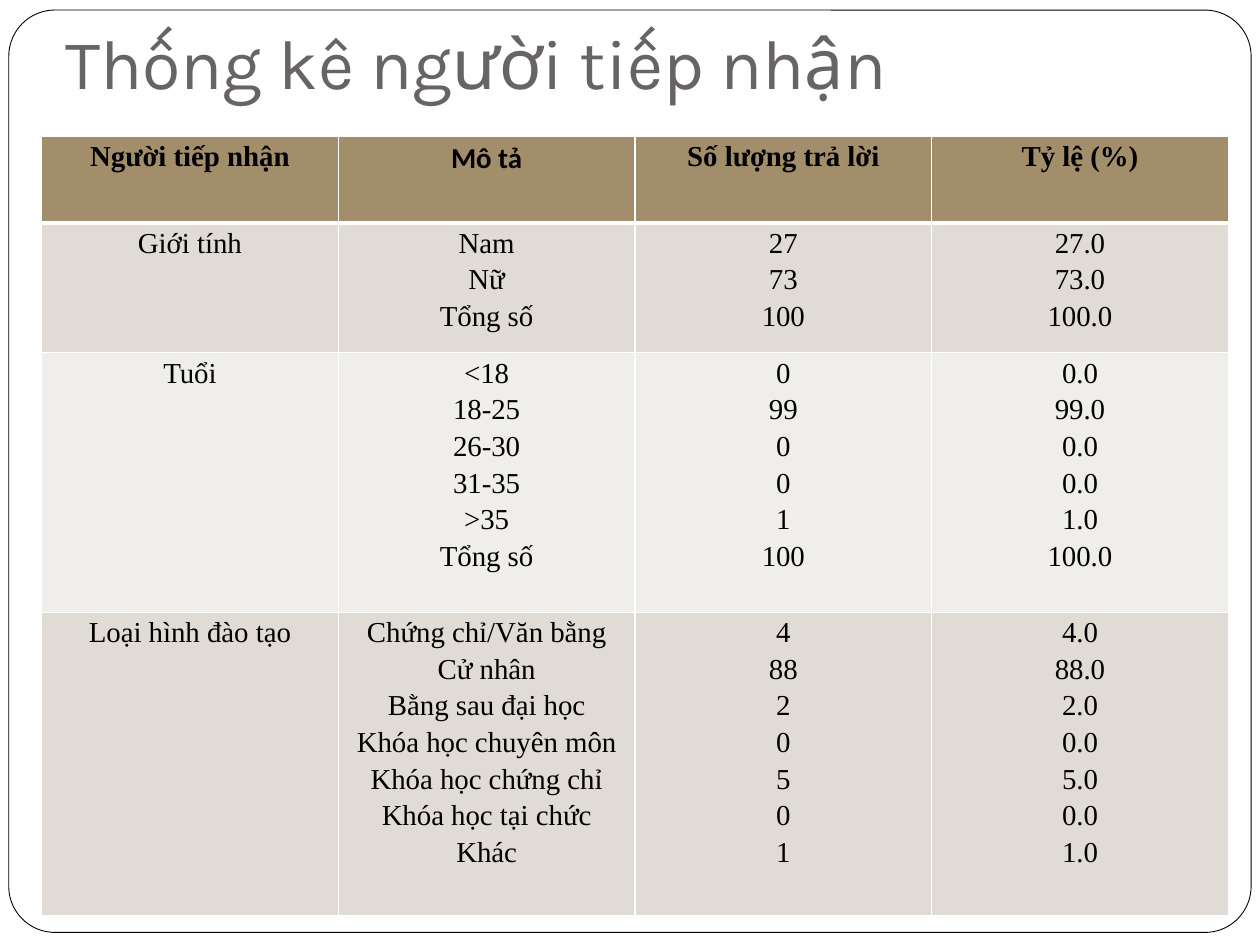
from lxml import etree
from pptx import Presentation
from pptx.dml.color import RGBColor
from pptx.enum.shapes import MSO_SHAPE
from pptx.enum.text import MSO_ANCHOR, PP_ALIGN
from pptx.oxml.ns import qn
from pptx.util import Inches, Pt

ROUNDED = MSO_SHAPE.ROUNDED_RECTANGLE
BOTTOM = MSO_ANCHOR.BOTTOM
CENTER = PP_ALIGN.CENTER
LEFT = PP_ALIGN.LEFT

HEADERS = ["Người tiếp nhận", "Mô tả", "Số lượng trả lời", "Tỷ lệ (%)"]
GROUPS = [
    ("Giới tính", {"Nam": 27, "Nữ": 73, "Tổng số": 100}),
    ("Tuổi", {"<18": 0, "18-25": 99, "26-30": 0, "31-35": 0, ">35": 1, "Tổng số": 100}),
    ("Loại hình đào tạo", {
        "Chứng chỉ/Văn bằng": 4, "Cử nhân": 88, "Bằng sau đại học": 2,
        "Khóa học chuyên môn": 0, "Khóa học chứng chỉ": 5,
        "Khóa học tại chức": 0, "Khác": 1}),
]
ROW_HEIGHTS = [0.69, 1.03, 2.06, 2.41]
ROW_FILLS = ["A28E6A", "E0DBD4", "F0EEEB", "E0DBD4"]


def color(value):
    return RGBColor.from_string(value)


def write(text_frame, text, font="Times New Roman", size=16.5, fill="000000",
          bold=False, align=CENTER, spacing=1.15):
    text_frame.text = text
    for paragraph in text_frame.paragraphs:
        paragraph.alignment = align
        paragraph.line_spacing = spacing
        for run in paragraph.runs:
            run.font.name = font
            run.font.size = Pt(size)
            run.font.bold = bold
            run.font.color.rgb = color(fill)


presentation = Presentation()
presentation.slide_width = Inches(10)
presentation.slide_height = Inches(7.5)
slide = presentation.slides.add_slide(presentation.slide_layouts[6])

frame = slide.shapes.add_shape(ROUNDED, Inches(0.07), Inches(0.08), Inches(9.86), Inches(7.32))
frame.adjustments[0] = 0.05
frame.shadow.inherit = False
frame.fill.solid()
frame.fill.fore_color.rgb = color("FFFFFF")
frame.line.color.rgb = color("000000")
frame.line.width = Pt(0.5)

title = slide.shapes.add_textbox(Inches(0.42), Inches(-0.33), Inches(8.5), Inches(1.25))
title.text_frame.word_wrap = True
title.text_frame.vertical_anchor = BOTTOM
title.text_frame.margin_bottom = Inches(0.1)
write(title.text_frame, "Thống kê người tiếp nhận", font="Karla", size=40,
      fill="696464", align=LEFT, spacing=1.0)

rows = [HEADERS]
for group, counts in GROUPS:
    rows.append([
        group,
        "\n".join(counts),
        "\n".join(str(count) for count in counts.values()),
        "\n".join(f"{count:.1f}" for count in counts.values()),
    ])

table = slide.shapes.add_table(len(rows), len(HEADERS), Inches(0.33), Inches(1.08),
                               Inches(9.42), Inches(sum(ROW_HEIGHTS))).table
for row_index, row in enumerate(rows):
    table.rows[row_index].height = Inches(ROW_HEIGHTS[row_index])
    for column_index, text in enumerate(row):
        cell = table.cell(row_index, column_index)
        cell.margin_left = cell.margin_right = Inches(0.07)
        cell.margin_top = cell.margin_bottom = 0
        cell.fill.solid()
        cell.fill.fore_color.rgb = color(ROW_FILLS[row_index])
        font = "Calibri" if text == "Mô tả" else "Times New Roman"
        write(cell.text_frame, text, font=font, bold=row_index == 0)

        properties = cell._tc.get_or_add_tcPr()
        for position, side in enumerate(["a:lnL", "a:lnR", "a:lnT", "a:lnB"]):
            under_header = (row_index, side) in [(0, "a:lnB"), (1, "a:lnT")]
            border = etree.Element(qn(side), w=str(Pt(3 if under_header else 1)))
            border_fill = etree.SubElement(border, qn("a:solidFill"))
            etree.SubElement(border_fill, qn("a:srgbClr"), val="FFFFFF")
            properties.insert(position, border)

presentation.save("out.pptx")
